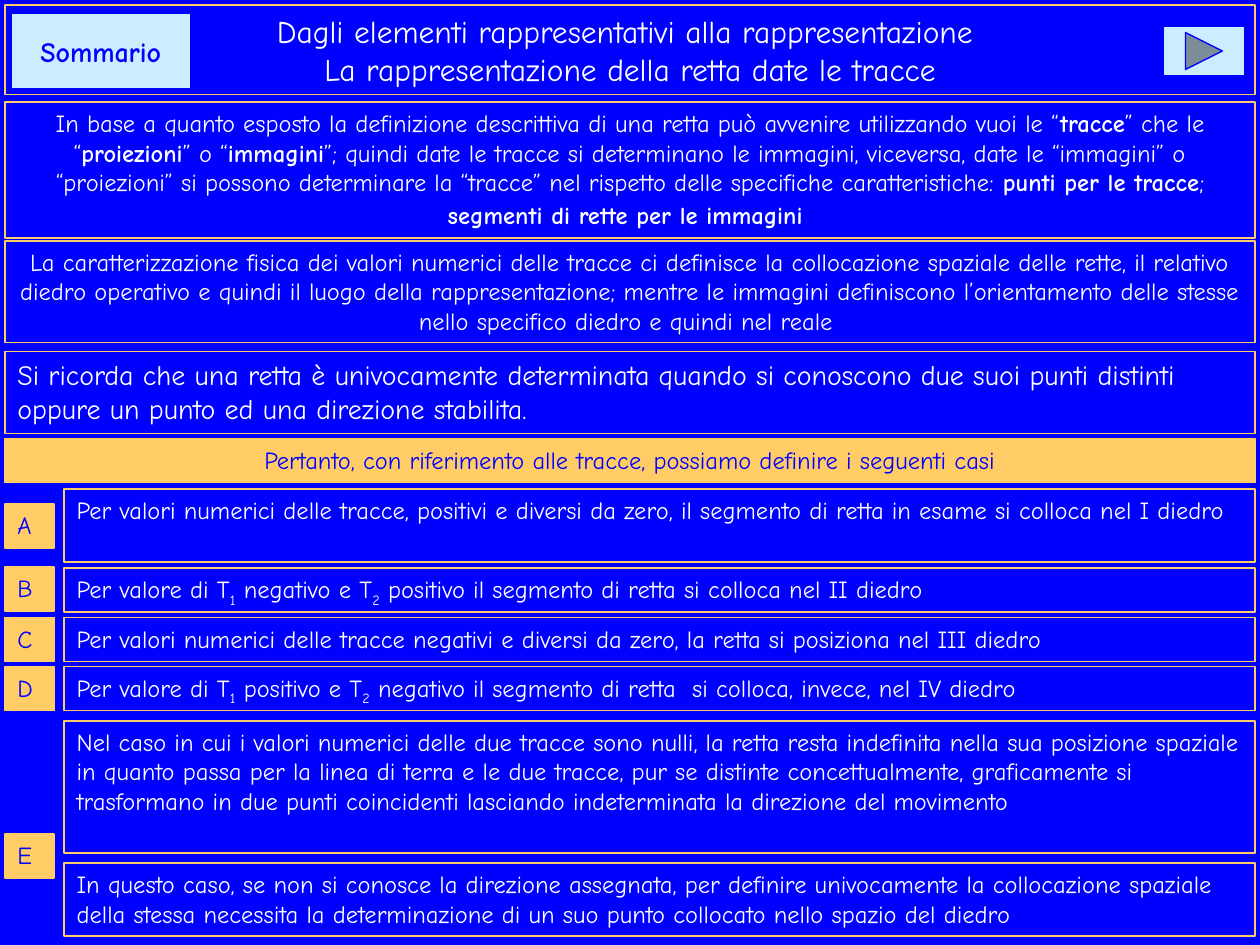
from dataclasses import dataclass

from pptx import Presentation
from pptx.dml.color import RGBColor
from pptx.enum.shapes import MSO_SHAPE
from pptx.enum.text import MSO_ANCHOR, PP_ALIGN
from pptx.util import Inches, Pt

RECTANGLE = MSO_SHAPE.RECTANGLE
BLANK_BUTTON = MSO_SHAPE.ACTION_BUTTON_CUSTOM
NEXT_BUTTON = MSO_SHAPE.ACTION_BUTTON_FORWARD_OR_NEXT
TOP, MIDDLE = MSO_ANCHOR.TOP, MSO_ANCHOR.MIDDLE
LEFT, CENTER = PP_ALIGN.LEFT, PP_ALIGN.CENTER

# Grid: 100 columns by 75 rows of square cells
COLUMNS, ROWS = 100, 75
CELL = Inches(0.1)
ROW_HEIGHT = 3.5
LETTER_WIDTH, LETTER_STEP = 3.9, 4.7


@dataclass(frozen=True)
class Theme:
    blue: RGBColor = RGBColor.from_string("0000FF")
    gold: RGBColor = RGBColor.from_string("FFCC66")
    pale: RGBColor = RGBColor.from_string("CCECFF")
    white: RGBColor = RGBColor.from_string("FFFFFF")
    font: str = "Comic Neue"
    body: int = 14
    large: int = 16
    title: int = 18


THEME = Theme()


@dataclass(frozen=True)
class Box:
    left: float
    top: float
    width: float
    height: float

    def inner(self, left, top, width, height):
        return Box(self.left + left, self.top + top, width, height)


TITLE = ("Dagli elementi rappresentativi alla rappresentazione \v"
         "La rappresentazione della retta date le tracce")

# Pieces at odd positions are bold
DEFINITION = [
    "In base a quanto esposto la definizione descrittiva di una retta può avvenire "
    "utilizzando vuoi le “", "tracce", "” che le “", "proiezioni", "” o “", "immagini",
    "”; quindi date le tracce si determinano le immagini, viceversa, date le “immagini” o "
    "“proiezioni” si possono determinare la “tracce” nel rispetto delle specifiche "
    "caratteristiche: ", "punti per le tracce", "; ", "segmenti di rette per le immagini", " ",
]
MEANING = ("La caratterizzazione fisica dei valori numerici delle tracce ci definisce la "
           "collocazione spaziale delle rette, il relativo diedro operativo e quindi il luogo "
           "della rappresentazione; mentre le immagini definiscono l’orientamento delle stesse "
           "nello specifico diedro e quindi nel reale ")
REMINDER = ("Si ricorda che una retta è univocamente determinata quando si conoscono due suoi "
            "punti distinti oppure un punto ed una direzione stabilita.")
HEADING = "Pertanto, con riferimento alle tracce, possiamo definire i seguenti casi"

# Letter, letter row, then (row, height, pieces); pieces at odd positions are subscripts
CASES = [
    ("A", 1.2, [(0, 5.8, [
        "Per valori numerici delle tracce, positivi e diversi da zero, il segmento di retta "
        "in esame si colloca nel I diedro"])]),
    ("B", 6.2, [(6.3, ROW_HEIGHT, [
        "Per valore di T", "1", " negativo e T", "2",
        " positivo il segmento di retta si colloca nel II diedro"])]),
    ("C", 10.2, [(10.2, ROW_HEIGHT, [
        "Per valori numerici delle tracce negativi e diversi da zero, la retta si posiziona "
        "nel III diedro"])]),
    ("D", 14.1, [(14.1, ROW_HEIGHT, [
        "Per valore di T", "1", " positivo e T", "2",
        " negativo il segmento di retta  si colloca, invece, nel IV diedro"])]),
    ("E", 27.4, [
        (18.4, 10.5, [
            "Nel caso in cui i valori numerici delle due tracce sono nulli, la retta resta "
            "indefinita nella sua posizione spaziale in quanto passa per la linea di terra e le "
            "due tracce, pur se distinte concettualmente, graficamente si trasformano in due "
            "punti coincidenti lasciando indeterminata la direzione del movimento"]),
        (29.7, 5.8, [
            "In questo caso, se non si conosce la direzione assegnata, per definire "
            "univocamente la collocazione spaziale della stessa necessita la determinazione di "
            "un suo punto collocato nello spazio del diedro"])]),
]


def add_panel(slide, box, kind=RECTANGLE, fill=None, line=THEME.gold, line_width=1):
    lengths = [round(n * CELL) for n in (box.left, box.top, box.width, box.height)]
    shape = slide.shapes.add_shape(kind, *lengths)
    shape.shadow.inherit = False
    if fill is None:
        shape.fill.background()
    else:
        shape.fill.solid()
        shape.fill.fore_color.rgb = fill
    shape.line.color.rgb = line
    shape.line.width = Pt(line_width)
    return shape


def write(shape, pieces, color=THEME.white, size=THEME.body, align=LEFT, anchor=TOP):
    """Write the pieces as runs of one paragraph and return the runs."""
    frame = shape.text_frame
    frame.word_wrap = True
    frame.vertical_anchor = anchor
    paragraph = frame.paragraphs[0]
    paragraph.text = pieces[0]
    paragraph.alignment = align
    for piece in pieces[1:]:
        paragraph.add_run().text = piece
    for run in paragraph.runs:
        run.font.name = THEME.font
        run.font.size = Pt(size)
        run.font.color.rgb = color
    return paragraph.runs


def draw_header(slide, box):
    title = add_panel(slide, box, line_width=0.75)
    write(title, [TITLE], size=THEME.title, align=CENTER, anchor=MIDDLE)
    # Navigation buttons
    button_style = dict(fill=THEME.pale, line=THEME.blue, line_width=0)
    add_panel(slide, box.inner(91.9, 1.7, 6.5, 3.9), NEXT_BUTTON, **button_style)
    summary = add_panel(slide, box.inner(0.5, 0.7, 14.2, 5.9), BLANK_BUTTON, **button_style)
    runs = write(summary, ["Sommario"], THEME.blue, THEME.large, CENTER, MIDDLE)
    runs[0].font.bold = True


def draw_introduction(slide, box):
    definition = add_panel(slide, box.inner(0, 0, box.width, 10.8))
    runs = write(definition, DEFINITION, align=CENTER)
    for run in runs[1::2]:
        run.font.bold = True
    runs[-1].font.size = Pt(THEME.large)

    meaning = add_panel(slide, box.inner(0, 11, box.width, 8.1))
    write(meaning, [MEANING], align=CENTER)
    reminder = add_panel(slide, box.inner(0, 19.8, box.width, 6.5))
    write(reminder, [REMINDER], size=THEME.large)


def draw_heading(slide, box):
    heading = add_panel(slide, box, fill=THEME.gold)
    write(heading, [HEADING], THEME.blue, align=CENTER)


def draw_cases(slide, box):
    for letter, letter_row, texts in CASES:
        label = add_panel(slide, box.inner(0, letter_row, LETTER_WIDTH, ROW_HEIGHT),
                          fill=THEME.gold)
        write(label, [letter], THEME.blue)
        for row, height, pieces in texts:
            panel = add_panel(slide, box.inner(LETTER_STEP, row, box.width - LETTER_STEP, height))
            for run in write(panel, pieces)[1::2]:
                run._r.get_or_add_rPr().set("baseline", "-25000")


def main():
    presentation = Presentation()
    presentation.slide_width = COLUMNS * CELL
    presentation.slide_height = ROWS * CELL
    slide = presentation.slides.add_slide(presentation.slide_layouts[6])
    slide.background.fill.solid()
    slide.background.fill.fore_color.rgb = THEME.blue

    margin = 0.4
    width = COLUMNS - 2 * margin
    draw_header(slide, Box(margin, 0.4, width, 7.1))
    draw_introduction(slide, Box(margin, 8.1, width, 26.3))
    draw_heading(slide, Box(margin, 34.8, width, ROW_HEIGHT))
    draw_cases(slide, Box(margin, 38.8, width, 35.5))
    presentation.save("out.pptx")


if __name__ == "__main__":
    main()
